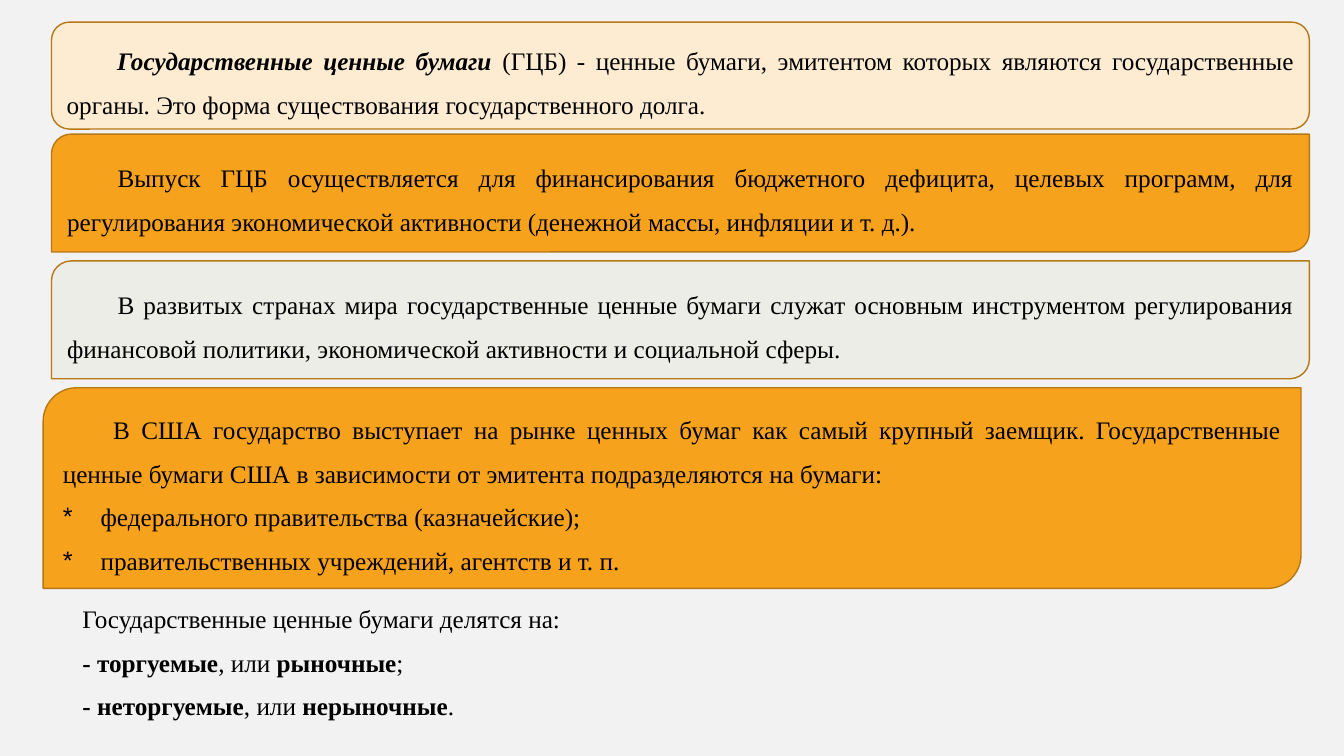
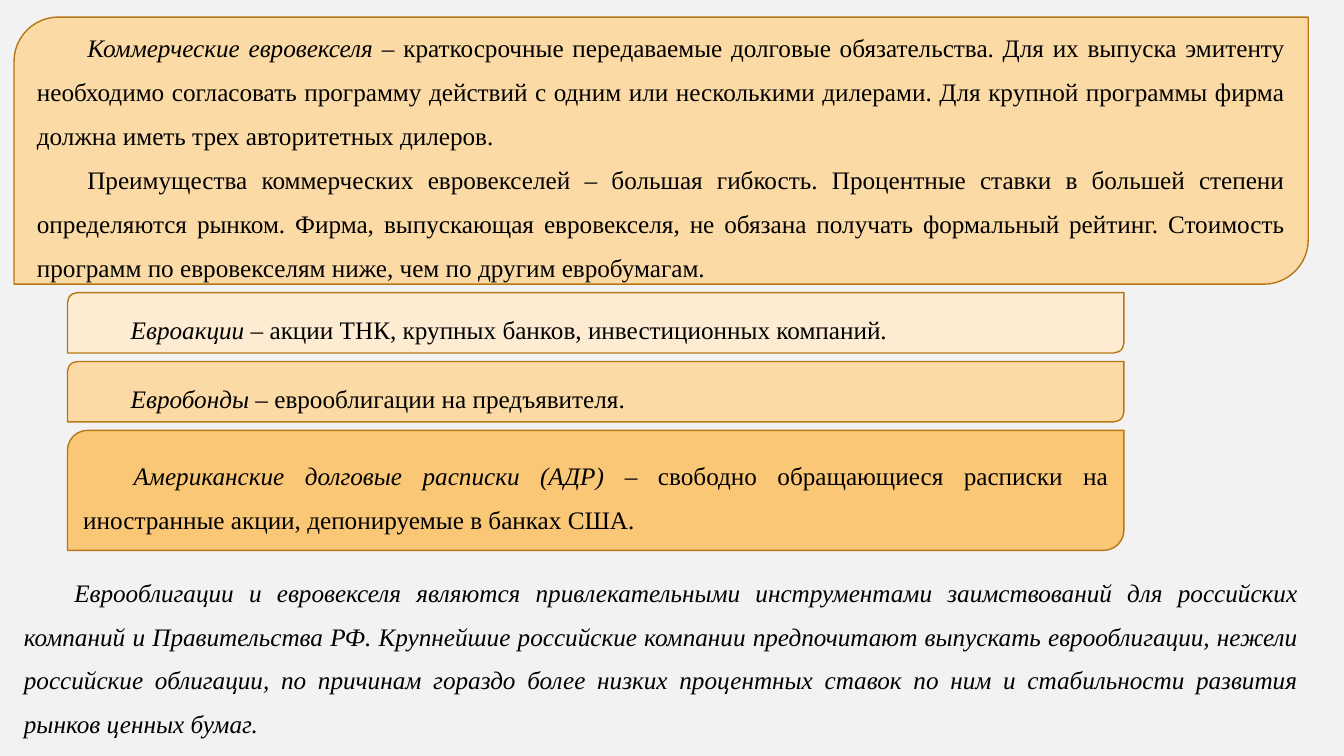
from dataclasses import dataclass

from lxml.etree import SubElement
from pptx import Presentation
from pptx.dml.color import RGBColor
from pptx.enum.shapes import MSO_SHAPE
from pptx.enum.text import MSO_ANCHOR, PP_ALIGN
from pptx.oxml.ns import qn
from pptx.util import Pt


@dataclass(frozen=True)
class Theme:
    background: str = "F2F2F2"
    cream: str = "FDECD2"
    peach: str = "FBDAA5"
    apricot: str = "FAC777"
    orange: str = "F6A21D"
    grey: str = "EBEDE6"
    outline: str = "B67815"
    ink: str = "000000"
    font: str = "Times New Roman"
    bullet_font: str = "Arial"
    size: float = 18
    line_spacing: float = 1.45
    line_width: float = 1
    first_indent: float = 36
    hanging: float = 27


T = Theme()


def rgb(value):
    return RGBColor.from_string(value)


def new_slide(prs):
    s = prs.slides.add_slide(prs.slide_layouts[6])
    s.background.fill.solid()
    s.background.fill.fore_color.rgb = rgb(T.background)
    return s


# Text: a paragraph is (kind, run, run, ...), a run is (text, style letters)
def set_indent(p, kind):
    pPr = p._p.get_or_add_pPr()
    if kind == "indent":
        pPr.set("indent", str(Pt(T.first_indent)))
    elif kind == "bullet":
        pPr.set("marL", str(Pt(T.hanging)))
        pPr.set("indent", str(-Pt(T.hanging)))
        SubElement(pPr, qn("a:buFont")).set("typeface", T.bullet_font)
        SubElement(pPr, qn("a:buChar")).set("char", "*")


def write(tf, paragraphs):
    tf.word_wrap = True
    for i, (kind, *runs) in enumerate(paragraphs):
        p = tf.add_paragraph() if i else tf.paragraphs[0]
        set_indent(p, kind)
        p.alignment = PP_ALIGN.JUSTIFY
        p.line_spacing = T.line_spacing
        for text, style in runs:
            r = p.add_run()
            r.text = text
            r.font.name = T.font
            r.font.size = Pt(T.size)
            r.font.color.rgb = rgb(T.ink)
            r.font.bold = "b" in style
            r.font.italic = "i" in style


# Regions: each takes its box as (left, top, width, height) in points
def card(s, box, fill, paragraphs, shape=MSO_SHAPE.ROUND_2_DIAG_RECTANGLE):
    sp = s.shapes.add_shape(shape, *map(Pt, box))
    sp.shadow.inherit = False
    sp.fill.solid()
    sp.fill.fore_color.rgb = rgb(fill)
    sp.line.color.rgb = rgb(T.outline)
    sp.line.width = Pt(T.line_width)
    sp.text_frame.vertical_anchor = MSO_ANCHOR.MIDDLE
    write(sp.text_frame, paragraphs)


def note(s, box, paragraphs):
    sp = s.shapes.add_textbox(*map(Pt, box))
    write(sp.text_frame, paragraphs)


def card_stack(s, top, gap, cards):
    for left, width, height, fill, paragraphs in cards:
        card(s, (left, top, width, height), fill, paragraphs)
        top += height + gap


def government_securities(prs):
    s = new_slide(prs)
    left, width = 36.8, 898.5

    # Definition
    card(s, (left, 15.8, width, 76.4), T.cream, [
        ("indent", ("Государственные ценные бумаги ", "bi"),
         ("(ГЦБ) - ценные бумаги, эмитентом которых являются государственные органы. "
          "Это форма существования государственного долга.", "")),
    ], MSO_SHAPE.ROUNDED_RECTANGLE)

    # Purpose, role and the US market
    card_stack(s, 95.8, 6.4, [
        (left, width, 84.2, T.orange, [
            ("indent", ("Выпуск ГЦБ осуществляется для финансирования бюджетного дефицита, "
                        "целевых программ, для регулирования экономической активности "
                        "(денежной массы, инфляции и т. д.).", "")),
        ]),
        (left, width, 84.2, T.grey, [
            ("indent", ("В развитых странах мира государственные ценные бумаги служат основным "
                        "инструментом регулирования финансовой политики, экономической "
                        "активности и социальной сферы.", "")),
        ]),
        (left - 6, width, 143.3, T.orange, [
            ("indent", ("В США государство выступает на рынке ценных бумаг как самый крупный "
                        "заемщик. Государственные ценные бумаги США в зависимости от эмитента "
                        "подразделяются на бумаги:", "")),
            ("bullet", ("федерального правительства (казначейские);", "")),
            ("bullet", ("правительственных учреждений, агентств и т. п.", "")),
        ]),
    ])

    # Classification
    note(s, (51.8, 417.6, 826.6, 98.6), [
        ("plain", ("Государственные ценные бумаги делятся на:", "")),
        ("plain", ("- торгуемые", "b"), (", или ", ""), ("рыночные", "b"), (";", "")),
        ("plain", ("- неторгуемые", "b"), (", или ", ""), ("нерыночные", "b"), (".", "")),
    ])


def euro_securities(prs):
    s = new_slide(prs)
    wide_left, wide = 10, 924.5
    left, width = 48.2, 754.6

    # Types of securities
    card_stack(s, 12.2, 6, [
        (wide_left, wide, 190.8, T.peach, [
            ("indent", ("Коммерческие евровекселя ", "i"),
             ("– краткосрочные передаваемые долговые обязательства. Для их выпуска эмитенту "
              "необходимо согласовать программу действий с одним или несколькими дилерами. "
              "Для крупной программы фирма должна иметь трех авторитетных дилеров.", "")),
            ("indent", ("Преимущества коммерческих евровекселей – большая гибкость. Процентные "
                        "ставки в большей степени определяются рынком. Фирма, выпускающая "
                        "евровекселя, не обязана получать формальный рейтинг. Стоимость "
                        "программ по евровекселям ниже, чем по другим евробумагам.", "")),
        ]),
        (left, width, 43.2, T.cream, [
            ("indent", ("Евроакции ", "i"),
             ("– акции ТНК, крупных банков, инвестиционных компаний.", "")),
        ]),
        (left, width, 43.2, T.peach, [
            ("indent", ("Евробонды ", "i"), ("– еврооблигации на предъявителя.", "")),
        ]),
        (left, width, 85.7, T.apricot, [
            ("indent", ("Американские долговые расписки (АДР) ", "i"),
             ("– свободно обращающиеся расписки на иностранные акции, "
              "депонируемые в банках США.", "")),
        ]),
    ])

    # Conclusion
    note(s, (wide_left, 399, wide, 130.3), [
        ("indent", ("Еврооблигации и евровекселя являются привлекательными инструментами "
                    "заимствований для российских компаний и Правительства РФ. Крупнейшие "
                    "российские компании предпочитают выпускать еврооблигации, нежели "
                    "российские облигации, по причинам гораздо более низких процентных ставок "
                    "по ним и стабильности развития рынков ценных бумаг.", "i")),
    ])


def main():
    prs = Presentation()
    prs.slide_width, prs.slide_height = Pt(960), Pt(540)
    government_securities(prs)
    euro_securities(prs)
    prs.save("out.pptx")


if __name__ == "__main__":
    main()
